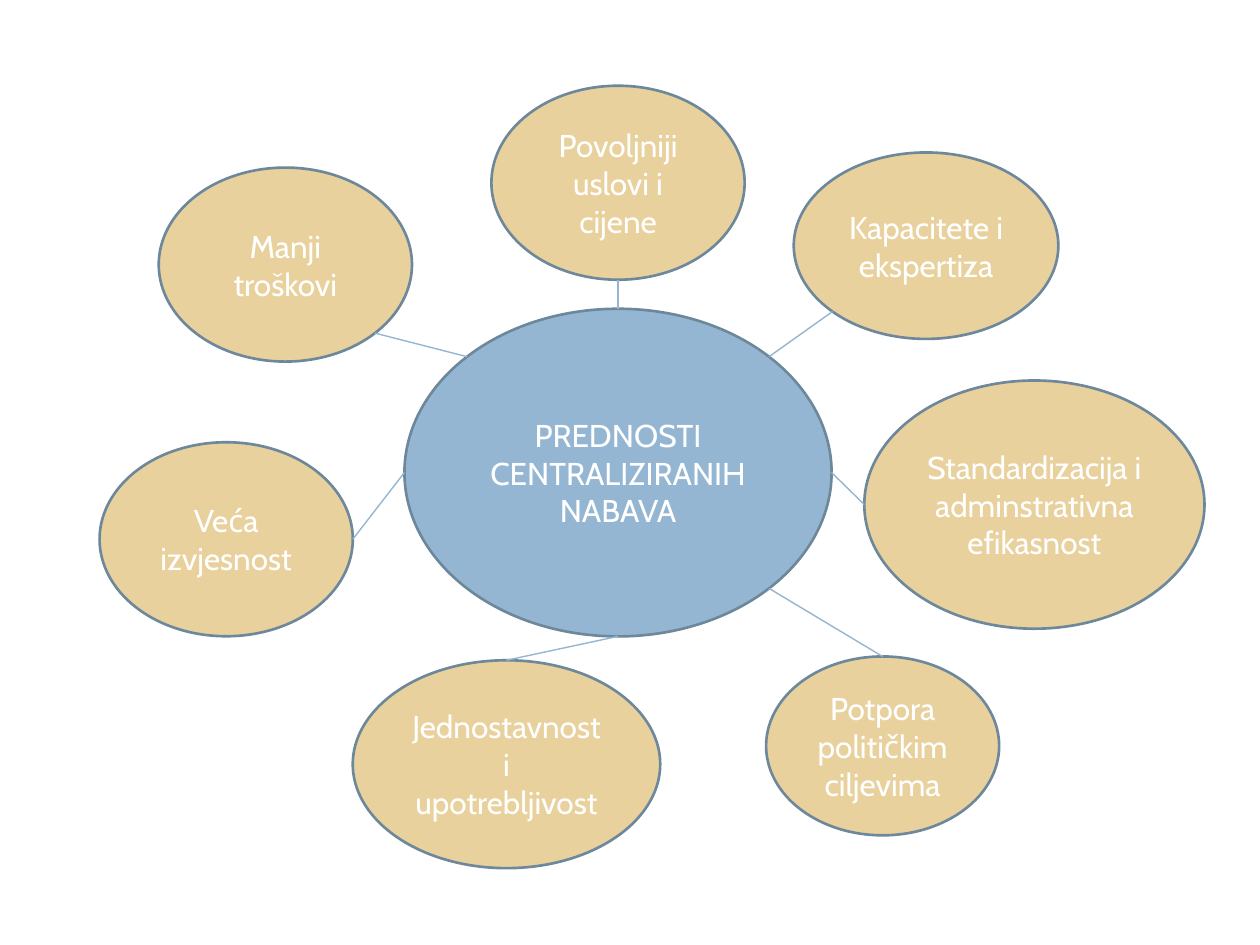
from dataclasses import dataclass
from math import cos, radians, sin

from lxml import etree
from pptx import Presentation
from pptx.dml.color import RGBColor
from pptx.enum.shapes import MSO_CONNECTOR, MSO_SHAPE
from pptx.enum.text import MSO_ANCHOR, PP_ALIGN
from pptx.oxml.ns import qn
from pptx.util import Inches, Pt

ELLIPSE = MSO_SHAPE.OVAL
STRAIGHT = MSO_CONNECTOR.STRAIGHT
CENTER = PP_ALIGN.CENTER
MIDDLE = MSO_ANCHOR.MIDDLE

COLORS = {
    "hub": "94B6D2",
    "benefit": "E8D19D",
    "outline": "6D879B",
    "spoke": "94B6D2",
    "text": "FFFFFF",
}
SLIDE_WIDTH, SLIDE_HEIGHT = Inches(10), Inches(7.5)
BLANK_LAYOUT = 6

RIGHT, LOWER_RIGHT, BOTTOM, LOWER_LEFT = 0, 45, 90, 135
LEFT, UPPER_LEFT, TOP, UPPER_RIGHT = 180, 225, 270, 315


@dataclass(frozen=True)
class Bubble:
    """Position and size are percentages of the slide's width and height."""

    text: str
    left: float
    top: float
    width: float
    height: float
    bubble_site: int = RIGHT
    hub_site: int = LEFT

    def edge(self, angle: int) -> tuple[int, int]:
        x = self.left + self.width / 2 * (1 + cos(radians(angle)))
        y = self.top + self.height / 2 * (1 + sin(radians(angle)))
        return across(x), down(y)


HUB = Bubble("PREDNOSTI CENTRALIZIRANIH NABAVA", 32.1, 32.67, 33.9, 34.67)
BENEFITS = [
    Bubble("Manji troškovi", 12.6, 17.73, 20.1, 20.53, LOWER_RIGHT, UPPER_LEFT),
    Bubble("Veća izvjesnost", 7.9, 46.8, 20.1, 20.53, RIGHT, LEFT),
    Bubble("Jednostavnost i upotrebljivost", 28, 69.87, 24.4, 22, TOP, BOTTOM),
    Bubble("Potpora političkim ciljevima", 60.8, 69.47, 18.5, 18.93, TOP, LOWER_RIGHT),
    Bubble("Standardizacija i adminstrativna efikasnost",
           68.6, 40.27, 27, 26.27, LEFT, RIGHT),
    Bubble("Kapacitete i ekspertiza", 63, 16.13, 21, 19.73, LOWER_LEFT, UPPER_RIGHT),
    Bubble("Povoljniji uslovi i cijene", 39, 9.07, 20.1, 20.53, BOTTOM, TOP),
]


def across(percent: float) -> int:
    return round(SLIDE_WIDTH * percent / 100)


def down(percent: float) -> int:
    return round(SLIDE_HEIGHT * percent / 100)


def rgb(role: str) -> RGBColor:
    return RGBColor.from_string(COLORS[role])


def write_text(frame, text: str, *, size: float = 18, font: str = "Cabin",
               color: str = "text", align=CENTER, anchor=MIDDLE) -> None:
    frame.word_wrap = True
    frame.vertical_anchor = anchor
    paragraph = frame.paragraphs[0]
    paragraph.alignment = align
    run = paragraph.add_run()
    run.text = text
    run.font.size = Pt(size)
    run.font.name = font
    run.font.color.rgb = rgb(color)


def draw_bubble(slide, bubble: Bubble, fill: str) -> None:
    ellipse = slide.shapes.add_shape(
        ELLIPSE, across(bubble.left), down(bubble.top),
        across(bubble.width), down(bubble.height))
    ellipse.shadow.inherit = False
    ellipse.fill.solid()
    ellipse.fill.fore_color.rgb = rgb(fill)
    ellipse.line.color.rgb = rgb("outline")
    ellipse.line.width = Pt(1.5)
    write_text(ellipse.text_frame, bubble.text)


def draw_spoke(slide, bubble: Bubble) -> None:
    spoke = slide.shapes.add_connector(
        STRAIGHT, *bubble.edge(bubble.bubble_site), *HUB.edge(bubble.hub_site))
    spoke.line.color.rgb = rgb("spoke")
    spoke.line.width = Pt(0.79)
    etree.SubElement(spoke._element.spPr, qn("a:effectLst"))


def main() -> None:
    presentation = Presentation()
    presentation.slide_width = SLIDE_WIDTH
    presentation.slide_height = SLIDE_HEIGHT
    slide = presentation.slides.add_slide(presentation.slide_layouts[BLANK_LAYOUT])
    draw_bubble(slide, HUB, "hub")
    for benefit in BENEFITS:
        draw_bubble(slide, benefit, "benefit")
    for benefit in BENEFITS:
        draw_spoke(slide, benefit)
    presentation.save("out.pptx")


if __name__ == "__main__":
    main()
